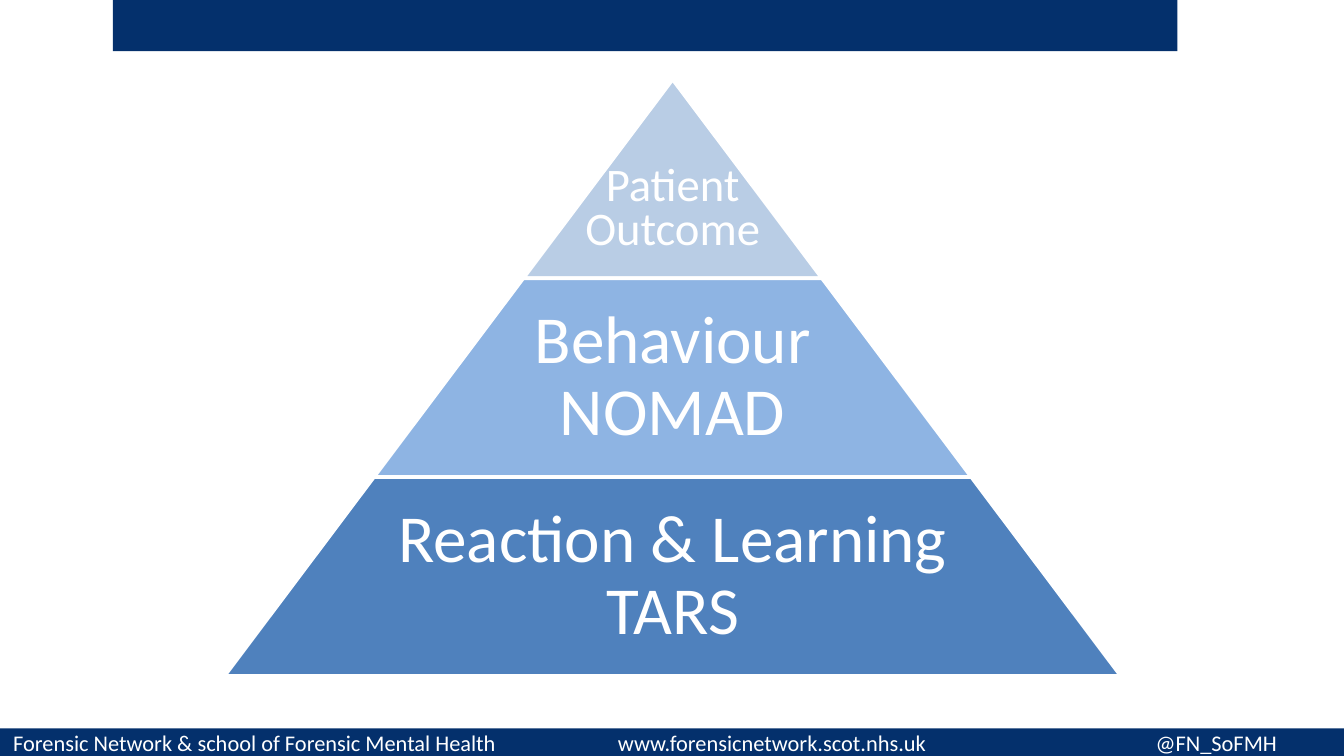
from dataclasses import dataclass

from lxml import etree
from pptx import Presentation
from pptx.dml.color import RGBColor
from pptx.enum import shapes, text
from pptx.oxml import ns
from pptx.util import Inches, Pt


@dataclass(frozen=True)
class Theme:
    font: str = "Calibri"
    navy: str = "04306C"
    white: str = "FFFFFF"
    tiers: tuple = ("B9CDE5", "8EB4E3", "4F81BD")
    footer_size: int = 12
    peak_size: int = 25
    tier_size: int = 36


THEME = Theme()
SLIDE_WIDTH = 10
SLIDE_HEIGHT = SLIDE_WIDTH * 9 / 16


def add_block(slide, preset, box, fill, outline=None):
    block = slide.shapes.add_shape(preset, *map(Inches, box))
    block.shadow.inherit = False
    block.fill.solid()
    block.fill.fore_color.rgb = RGBColor.from_string(fill)
    if outline:
        block.line.color.rgb = RGBColor.from_string(outline)
        block.line.width = Pt(2)
    else:
        block.line.fill.background()
    return block


def format_runs(paragraph, size):
    for run in paragraph.runs:
        run.font.name = THEME.font
        run.font.size = Pt(size)
        run.font.color.rgb = RGBColor.from_string(THEME.white)


def add_header(slide, box):
    add_block(slide, shapes.MSO_SHAPE.RECTANGLE, box, THEME.navy)


def add_footer(slide, box, entries, tab_stops):
    footer = add_block(slide, shapes.MSO_SHAPE.RECTANGLE, box, THEME.navy)
    frame = footer.text_frame
    frame.vertical_anchor = text.MSO_ANCHOR.MIDDLE
    frame.text = "\t".join(entries)
    line = frame.paragraphs[0]
    line.alignment = text.PP_ALIGN.LEFT
    tabs = etree.SubElement(line._p.get_or_add_pPr(), ns.qn("a:tabLst"))
    for stop in tab_stops:
        etree.SubElement(tabs, ns.qn("a:tab"), pos=str(Inches(stop)), algn="l")
    format_runs(line, THEME.footer_size)


def add_label(slide, box, wording, size, line_spacing, space_after, inset, drop):
    label = slide.shapes.add_textbox(*map(Inches, box))
    frame = label.text_frame
    frame.word_wrap = True
    frame.vertical_anchor = text.MSO_ANCHOR.MIDDLE
    frame.margin_left = frame.margin_right = frame.margin_bottom = Inches(inset)
    frame.margin_top = Inches(inset + drop)
    frame.text = wording
    for paragraph in frame.paragraphs:
        paragraph.alignment = text.PP_ALIGN.CENTER
        paragraph.line_spacing = line_spacing
        paragraph.space_after = Pt(space_after)
        format_runs(paragraph, size)


def add_pyramid(slide, box, tiers):
    left, top, width, height = box
    tier_height = height / len(tiers)
    step = width / len(tiers)
    for level, (fill, wording) in enumerate(zip(THEME.tiers, tiers)):
        tier_width = step * (level + 1)
        tier_left = left + (width - tier_width) / 2
        tier_top = top + level * tier_height
        tier = add_block(slide, shapes.MSO_SHAPE.TRAPEZOID,
                         (tier_left, tier_top, tier_width, tier_height),
                         fill, THEME.white)
        tier.adjustments[0] = step / 2 / tier_height
        is_peak = level == 0
        label_width = tier_width if is_peak else tier_width * 0.65
        label_box = (left + (width - label_width) / 2, tier_top, label_width, tier_height)
        if is_peak:
            add_label(slide, label_box, wording, THEME.peak_size, 0.5, 9, 0.03, 0.54)
        else:
            add_label(slide, label_box, wording, THEME.tier_size, 0.9, 0, 0.05, 0)


def main():
    presentation = Presentation()
    presentation.slide_width = Inches(SLIDE_WIDTH)
    presentation.slide_height = Inches(SLIDE_HEIGHT)
    slide = presentation.slides.add_slide(presentation.slide_layouts[6])
    add_header(slide, (0.84, 0, 7.92, 0.38))
    add_footer(
        slide, (0, 5.42, SLIDE_WIDTH, 0.21),
        ("Forensic Network & school of Forensic Mental Health",
         "www.forensicnetwork.scot.nhs.uk", "@FN_SoFMH"),
        (4.5, 8.5),
    )
    add_pyramid(
        slide, (1.67, 0.59, 6.67, 4.44),
        ("Patient\nOutcome", "Behaviour NOMAD", "Reaction & Learning TARS"),
    )
    presentation.save("out.pptx")


if __name__ == "__main__":
    main()
